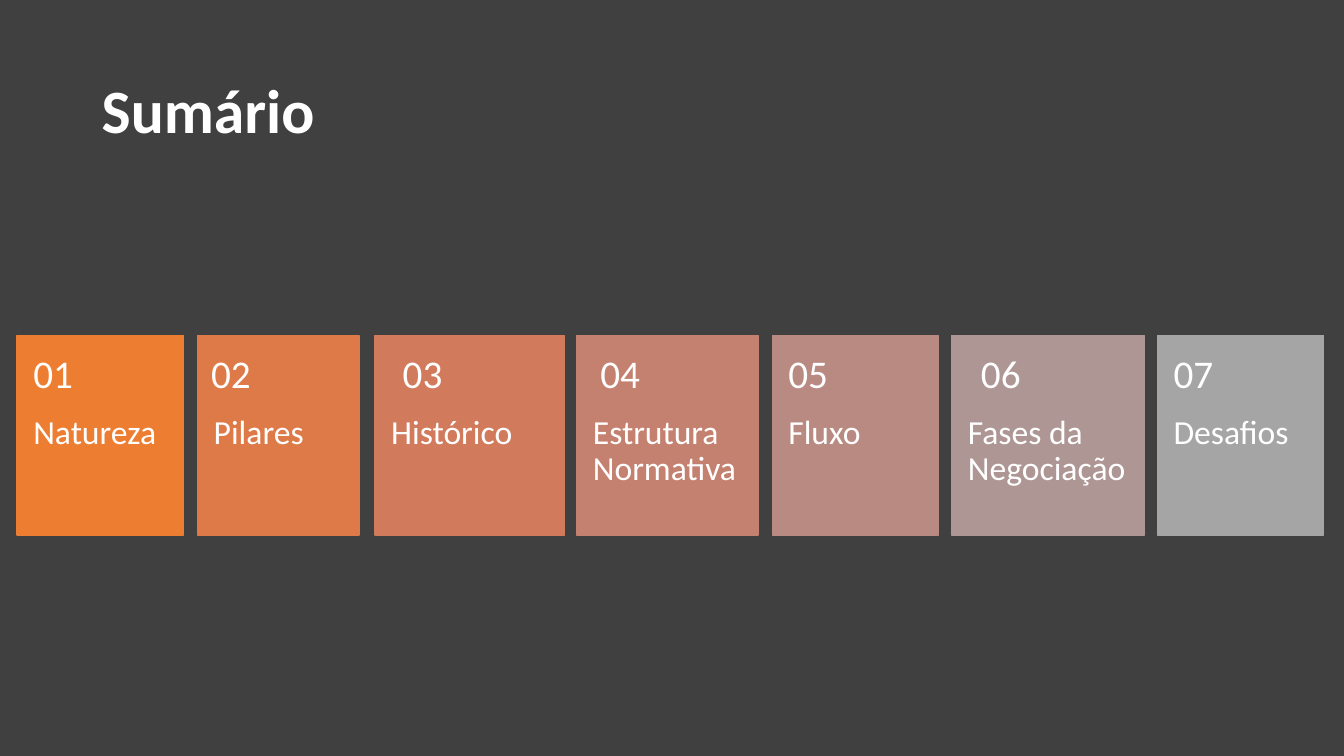
"""Build the summary slide: a title above a row of seven numbered topic cards."""
import dataclasses
import typing

import pptx
import pptx.dml.color
import pptx.enum.shapes
import pptx.enum.text
import pptx.util

Pt = pptx.util.Pt
Inches = pptx.util.Inches
ANCHOR = pptx.enum.text.MSO_ANCHOR
WIDTH, HEIGHT = Inches(13.33), Inches(7.5)
FONT = "Calibri"
COLOURS = {
    "background": "404040",
    "text": "FFFFFF",
    "01": "ED7D31",
    "02": "DE7A47",
    "03": "D17B5C",
    "04": "C48170",
    "05": "B98A82",
    "06": "AE9694",
    "07": "A5A5A5",
}


@dataclasses.dataclass(frozen=True)
class Box:
    """A rectangle in percent of the slide's width and height."""
    left: float
    top: float
    width: float
    height: float

    def emu(self) -> tuple[int, int, int, int]:
        return (round(self.left * WIDTH / 100), round(self.top * HEIGHT / 100),
                round(self.width * WIDTH / 100), round(self.height * HEIGHT / 100))


@dataclasses.dataclass(frozen=True)
class Style:
    """The format values of a text box."""
    frame: dict[str, typing.Any]
    paragraph: dict[str, typing.Any]
    font: dict[str, typing.Any]


@dataclasses.dataclass(frozen=True)
class Card:
    """A topic with its left edge and width in percent of the slide."""
    label: str
    left: float
    width: float


CARD_TOP, CARD_HEIGHT = 44.4, 26.4
NUMBER_WIDTH, NUMBER_HEIGHT = 12.38, 10.53
TITLE_BOX = Box(6.83, 5.33, 86.35, 19.33)
SIDES = {"margin_left": Inches(0.16), "margin_right": Inches(0.16)}

TITLE = Style(
    {"vertical_anchor": ANCHOR.MIDDLE},
    {"line_spacing": 0.9, "space_after": Pt(6)},
    {"size": Pt(44), "bold": True},
)
LABEL = Style(
    {**SIDES, "vertical_anchor": ANCHOR.TOP, "margin_top": 0, "margin_bottom": Inches(0.36)},
    {"line_spacing": 0.9, "space_after": Pt(8.4)},
    {"size": Pt(24)},
)
NUMBER = Style(
    {**SIDES, "vertical_anchor": ANCHOR.MIDDLE,
     "margin_top": Inches(0.18), "margin_bottom": Inches(0.18)},
    {"line_spacing": 0.9, "space_after": Pt(9.8)},
    {"size": Pt(28)},
)

CARDS = [
    Card("Natureza", 1.28, 12.38),
    Card("Pilares", 14.7, 12),
    Card("Histórico", 27.91, 14.1),
    Card("Estrutura Normativa", 42.91, 13.5),
    Card("Fluxo", 57.46, 12.38),
    Card("Fases da Negociação", 70.82, 14.33),
    Card("Desafios", 86.12, 12.38),
]


def rgb(name: str) -> pptx.dml.color.RGBColor:
    return pptx.dml.color.RGBColor.from_string(COLOURS[name])


def apply(target: typing.Any, values: dict[str, typing.Any]) -> None:
    for name, value in values.items():
        setattr(target, name, value)


def add_text(shapes: typing.Any, box: Box, text: str, style: Style) -> None:
    tf = shapes.add_textbox(*box.emu()).text_frame
    apply(tf, {"word_wrap": True, **style.frame})
    p = tf.paragraphs[0]
    apply(p, style.paragraph)
    r = p.add_run()
    r.text = text
    apply(r.font, {"name": FONT, **style.font})
    r.font.color.rgb = rgb("text")


def add_card(shapes: typing.Any, card: Card, number: str) -> None:
    box = Box(card.left, CARD_TOP, card.width, CARD_HEIGHT)
    sp = shapes.add_shape(pptx.enum.shapes.MSO_SHAPE.RECTANGLE, *box.emu())
    sp.shadow.inherit = False
    sp.fill.solid()
    sp.fill.fore_color.rgb = rgb(number)
    sp.line.color.rgb = rgb(number)
    sp.line.width = Pt(1)
    label_box = Box(card.left, CARD_TOP + NUMBER_HEIGHT, card.width, CARD_HEIGHT - NUMBER_HEIGHT)
    add_text(shapes, label_box, card.label, LABEL)
    number_left = card.left + (card.width - NUMBER_WIDTH) / 2
    add_text(shapes, Box(number_left, CARD_TOP, NUMBER_WIDTH, NUMBER_HEIGHT), number, NUMBER)


def main() -> None:
    prs = pptx.Presentation()
    apply(prs, {"slide_width": WIDTH, "slide_height": HEIGHT})
    s = prs.slides.add_slide(prs.slide_layouts[6])
    s.background.fill.solid()
    s.background.fill.fore_color.rgb = rgb("background")
    add_text(s.shapes, TITLE_BOX, "Sumário", TITLE)
    group = s.shapes.add_group_shape()
    for index, card in enumerate(CARDS, start=1):
        add_card(group.shapes, card, f"{index:02d}")
    prs.save("out.pptx")


if __name__ == "__main__":
    main()
